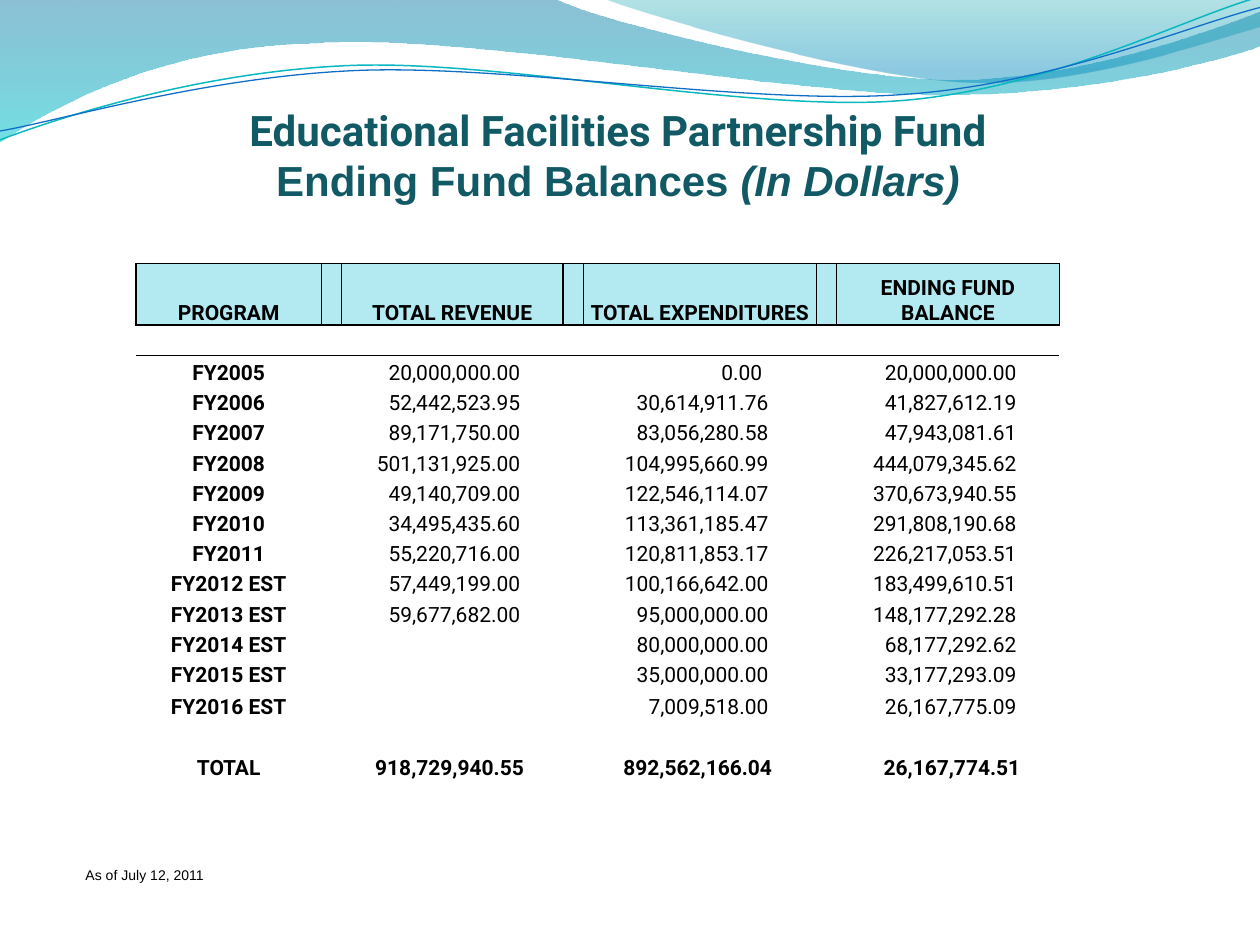
from math import cos, radians, sin

from lxml.etree import SubElement
from pptx import Presentation
from pptx.dml.color import RGBColor as RGB
from pptx.enum.text import MSO_ANCHOR as ANCHOR, PP_ALIGN as ALIGN
from pptx.oxml.ns import qn
from pptx.util import Inches, Pt

COLORS = {
    "title": "115964", "text": "000000", "header": "B3EAF2", "white": "FFFFFF",
    "deep": "0074A1", "aqua": "00C6CF", "teal": "00A1A9", "sky": "008BBF",
    "teal_line": "0AB8BF", "blue_line": "0F6FC6",
}
PLAIN_TABLE = "{2D5ABB26-0587-4C30-8999-92F81FD0307C}"
COL_WIDTHS = [1.47, 0.16, 1.76, 0.16, 1.85, 0.16, 1.77]
ROW_HEIGHTS = [0.49] + [0.24] * 12 + [0.25, 0.24, 0.25]
NUMBER_MARGINS = {2: 0.34, 4: 0.38, 6: 0.34}
HEADER = ["PROGRAM", "TOTAL REVENUE", "TOTAL EXPENDITURES", "ENDING FUND BALANCE"]
YEARS = [
    ["FY2005", "20,000,000.00", "0.00", "20,000,000.00"],
    ["FY2006", "52,442,523.95", "30,614,911.76", "41,827,612.19"],
    ["FY2007", "89,171,750.00", "83,056,280.58", "47,943,081.61"],
    ["FY2008", "501,131,925.00", "104,995,660.99", "444,079,345.62"],
    ["FY2009", "49,140,709.00", "122,546,114.07", "370,673,940.55"],
    ["FY2010", "34,495,435.60", "113,361,185.47", "291,808,190.68"],
    ["FY2011", "55,220,716.00", "120,811,853.17", "226,217,053.51"],
    ["FY2012 EST", "57,449,199.00", "100,166,642.00", "183,499,610.51"],
    ["FY2013 EST", "59,677,682.00", "95,000,000.00", "148,177,292.28"],
    ["FY2014 EST", "", "80,000,000.00", "68,177,292.62"],
    ["FY2015 EST", "", "35,000,000.00", "33,177,293.09"],
    ["FY2016 EST", "", "7,009,518.00", "26,167,775.09"],
]
TOTAL = ["TOTAL", "918,729,940.55", "892,562,166.04", "26,167,774.51"]
BLANK = [""] * 4

WAVES = [
    ([(0, 0), (4.4, -0.01), (4.76, 0.17, 6.64, 0.63, 7.58, 0.63),
      (8.53, 0.63, 9.58, 0.26, 10, 0.09), (10.01, 0.36),
      (9.83, 0.44, 8.7, 0.76, 7.46, 0.75), (6.22, 0.75, 3.82, 0.28, 2.57, 0.34),
      (1.29, 0.36, 0.46, 0.83, -0.01, 1.13)], [("deep", 45, 0), ("aqua", 55, 1)]),
    ([(4.79, -0.01), (5.09, 0.11, 6.82, 0.62, 7.69, 0.65),
      (8.56, 0.69, 9.61, 0.32, 10, 0.21), (10, 0)],
     [("teal", 30, 0), ("sky", 45, 0.8)]),
]
SWOOSHES = [
    ([(0, 1.11), (0.48, 0.93, 1.58, 0.57, 2.77, 0.52),
      (3.95, 0.47, 5.93, 0.89, 7.13, 0.8), (8.33, 0.71, 9.38, 0.15, 9.98, -0.02)],
     (4.99, 0.58), "teal_line", 0.85),
    ([(0, 1.04), (0.47, 0.96, 1.64, 0.61, 2.83, 0.56),
      (4.03, 0.51, 5.97, 0.84, 7.17, 0.75), (8.36, 0.67, 9.41, 0.21, 10, 0.06)],
     (5, 0.59), "blue_line", 0.75),
]
TILT = 2.7


def rgb(name):
    """Return the named colour."""
    return RGB.from_string(COLORS[name])


def turn(path, center, degrees):
    """Rotate every point of a path clockwise about a center."""
    (cx, cy), a = center, radians(degrees)
    turned = []
    for seg in path:
        pairs = [(x - cx, y - cy) for x, y in zip(seg[::2], seg[1::2])]
        turned.append(tuple(v for x, y in pairs for v in (
            cx + x * cos(a) - y * sin(a), cy + x * sin(a) + y * cos(a))))
    return turned


class FundSlide:
    """Hold the style and the current slide."""

    def __init__(self, prs):
        self.font = "Roboto"
        self.shapes = prs.slides.add_slide(prs.slide_layouts[6]).shapes

    def run(self, p, text, **style):
        r = p.add_run()
        r.text = text
        color = style.pop("color", "text")
        for key, value in {"name": self.font, "bold": False, **style}.items():
            setattr(r.font, key, value)
        r.font.color.rgb = rgb(color)

    def freeform(self, path, close):
        points = [(Inches(x), Inches(y)) for seg in path
                  for x, y in zip(seg[::2], seg[1::2])]
        fb = self.shapes.build_freeform(*points[0])
        fb.add_line_segments(points[1:], close=close)
        s = fb.convert_to_shape()
        s.shadow.inherit = False
        lines = iter(list(s.element.iter(qn("a:lnTo"))))
        for seg in path[1:]:
            first = next(lines)
            if len(seg) == 6:
                first.tag = qn("a:cubicBezTo")
                for _ in range(2):
                    line = next(lines)
                    first.append(line[0])
                    line.getparent().remove(line)
        return s

    def wave(self, path, stops):
        s = self.freeform(path, True)
        s.line.fill.background()
        s.fill.gradient()
        s.fill.gradient_angle = 270
        for stop, (color, _, position) in zip(s.fill.gradient_stops, stops):
            stop.color.rgb = rgb(color)
            stop.position = position
        for clr, (_, alpha, _) in zip(s.element.iter(qn("a:srgbClr")), stops):
            SubElement(clr, qn("a:alpha"), val=str(alpha * 1000))

    def swoosh(self, path, center, color, width):
        s = self.freeform(turn(path, center, TILT), False)
        s.rotation = -TILT
        s.fill.background()
        s.line.color.rgb = rgb(color)
        s.line.width = Pt(width)

    def text(self, box, lines, align=ALIGN.LEFT):
        tf = self.shapes.add_textbox(*map(Inches, box)).text_frame
        tf.word_wrap = True
        for i, runs in enumerate(lines):
            p = tf.add_paragraph() if i else tf.paragraphs[0]
            p.alignment = align
            for text, style in runs:
                self.run(p, text, **style)

    def border(self, cell, sides, color):
        props = cell._tc.get_or_add_tcPr()
        for i, side in enumerate(sides):
            ln = SubElement(props, qn(f"a:ln{side}"), w=str(Pt(1)))
            fill = SubElement(ln, qn("a:solidFill"))
            SubElement(fill, qn("a:srgbClr"), val=COLORS[color])
            props.insert(i, ln)

    def cell(self, cell, text, row, col, last):
        margin = 0.01
        p = cell.text_frame.paragraphs[0]
        p.alignment = ALIGN.CENTER
        if row and col in NUMBER_MARGINS:
            p.alignment = ALIGN.RIGHT
            margin = NUMBER_MARGINS[col] - (0.03 if row == last else 0)
            margin += 0.05 if text == "0.00" else 0
        layout = {"vertical_anchor": ANCHOR.BOTTOM, "margin_left": Inches(0.01),
                  "margin_right": Inches(margin), "margin_top": Inches(0.01),
                  "margin_bottom": 0}
        for key, value in layout.items():
            setattr(cell, key, value)
        if text:
            self.run(p, text, size=Pt(12), bold=col == 0 or row in (0, last))
        if row == 0:
            cell.fill.solid()
            cell.fill.fore_color.rgb = rgb("header")
        else:
            cell.fill.background()
        edges = {0: ("LRTB", "text"), 1: ("T", "text"), last: ("LRB", "white")}
        if row in edges:
            self.border(cell, *edges[row])

    def table(self, left, top, rows):
        frame = self.shapes.add_table(len(rows), len(COL_WIDTHS), Inches(left), Inches(top),
                                      Inches(sum(COL_WIDTHS)), Inches(sum(ROW_HEIGHTS)))
        table = frame.table
        table.first_row = table.horz_banding = False
        next(frame.element.iter(qn("a:tableStyleId"))).text = PLAIN_TABLE
        for column, width in zip(table.columns, COL_WIDTHS):
            column.width = Inches(width)
        for i, (values, height) in enumerate(zip(rows, ROW_HEIGHTS)):
            table.rows[i].height = Inches(height)
            for j in range(len(COL_WIDTHS)):
                text = "" if j % 2 else values[j // 2]
                self.cell(table.cell(i, j), text, i, j, len(rows) - 1)
        for p in frame.element.iter(qn("a:p")):
            if p.find(qn("a:r")) is None:
                SubElement(p, qn("a:endParaRPr"), sz="1200")


def main():
    prs = Presentation()
    prs.slide_width, prs.slide_height = Inches(10), Inches(7.5)
    s = FundSlide(prs)
    for wave in WAVES:
        s.wave(*wave)
    for swoosh in SWOOSHES:
        s.swoosh(*swoosh)
    s.table(1.08, 2.09, [HEADER, BLANK, *YEARS, BLANK, TOTAL])
    title = {"size": Pt(24), "bold": True, "color": "title"}
    arial = {**title, "name": "Arial"}
    s.text((0.78, 0.78, 8.25, 1.31), [
        [("Educational Facilities Partnership Fund", title)],
        [("Ending Fund Balances ", arial), ("(In Dollars)", {**arial, "italic": True})],
    ], ALIGN.CENTER)
    s.text((0.58, 6.83, 1.42, 0.24),
           [[("As of July 12, 2011", {"size": Pt(8), "name": "Arial"})]])
    prs.save("out.pptx")


if __name__ == "__main__":
    main()
